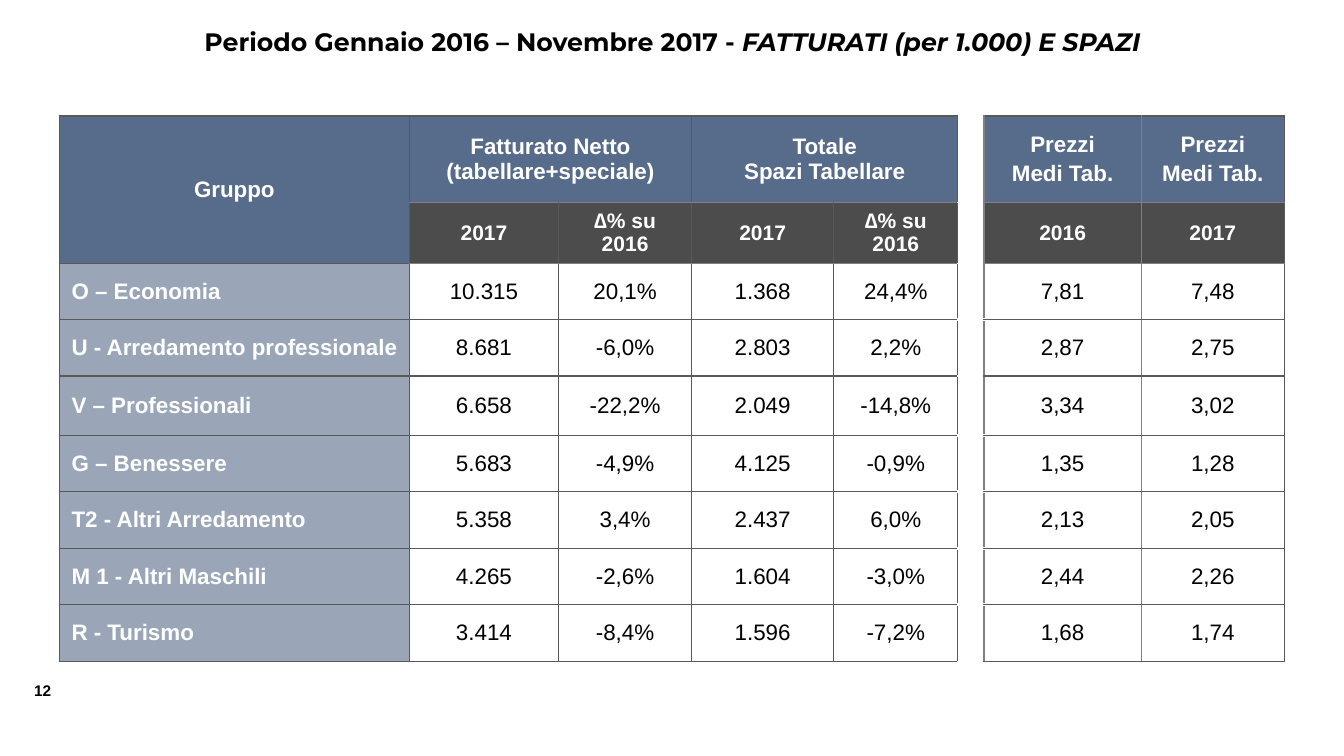
from dataclasses import dataclass
from typing import Optional

from lxml.etree import SubElement
from pptx import Presentation
from pptx.dml.color import RGBColor
from pptx.enum.text import MSO_ANCHOR, PP_ALIGN
from pptx.oxml.ns import qn
from pptx.util import Inches, Pt


@dataclass(frozen=True)
class Theme:
    blue: str = "576B8A"
    black: str = "000000"
    white: str = "FFFFFF"
    dark_rule: str = "595959"
    light_rule: str = "808080"
    table_font: str = "Arial"
    title_font: str = "Montserrat"
    title_size: int = 18
    table_size: int = 16
    subhead_size: int = 15
    number_size: int = 11


@dataclass(frozen=True)
class CellStyle:
    color: str
    fill: Optional[str] = None
    opacity: int = 100
    size: int = 16
    bold: bool = True
    align: PP_ALIGN = PP_ALIGN.CENTER
    margin_x: float = 0.1
    margin_y: float = 0.05
    left_indent: float = 0
    space_between: float = 0


@dataclass(frozen=True)
class Group:
    name: str
    revenue: str
    revenue_change: str
    space: str
    space_change: str
    price_2016: str
    price_2017: str

    def cells(self) -> list[str]:
        return [self.name, self.revenue, self.revenue_change, self.space,
                self.space_change, "", self.price_2016, self.price_2017]


THEME = Theme()
HEAD = CellStyle(THEME.white, THEME.blue, size=THEME.table_size)
PRICE_HEAD = CellStyle(THEME.white, THEME.blue, size=THEME.table_size, space_between=3.2)
SUBHEAD = CellStyle(THEME.white, THEME.black, 70, THEME.subhead_size)
NAME = CellStyle(THEME.white, THEME.blue, 60, THEME.table_size, align=PP_ALIGN.LEFT,
                 margin_x=0, margin_y=0, left_indent=0.12)
VALUE = CellStyle(THEME.black, size=THEME.table_size, bold=False, margin_x=0, margin_y=0)
GAP = CellStyle(THEME.black, THEME.white)

COL_WIDTHS = [3.47, 1.48, 1.32, 1.41, 1.23, 0.26, 1.56, 1.42]
ROW_HEIGHTS = [0.86, 0.6, 0.56, 0.56, 0.59, 0.56, 0.56, 0.56, 0.56]
GAP_COL = 5
PRICE_HEADING = "Prezzi\nMedi Tab."
HEADINGS = ["Gruppo", "Fatturato Netto (tabellare+speciale)", "",
            "Totale\nSpazi Tabellare", "", "", PRICE_HEADING, PRICE_HEADING]
SUBHEADINGS = ["", "2017", "∆% su 2016", "2017", "∆% su 2016", "", "2016", "2017"]
GROUPS = [
    Group("O – Economia", "10.315", "20,1%", "1.368", "24,4%", "7,81", "7,48"),
    Group("U - Arredamento professionale", "8.681", "-6,0%", "2.803", "2,2%", "2,87", "2,75"),
    Group("V – Professionali", "6.658", "-22,2%", "2.049", "-14,8%", "3,34", "3,02"),
    Group("G – Benessere", "5.683", "-4,9%", "4.125", "-0,9%", "1,35", "1,28"),
    Group("T2 - Altri Arredamento", "5.358", "3,4%", "2.437", "6,0%", "2,13", "2,05"),
    Group("M 1 - Altri Maschili", "4.265", "-2,6%", "1.604", "-3,0%", "2,44", "2,26"),
    Group("R - Turismo", "3.414", "-8,4%", "1.596", "-7,2%", "1,68", "1,74"),
]


def set_font(font, name: str, size: int, color: str, bold: bool) -> None:
    font.name, font.size, font.bold = name, Pt(size), bold
    font.color.rgb = RGBColor.from_string(color)


def cell_style(row: int, col: int) -> CellStyle:
    if col == GAP_COL:
        return GAP
    if row == 0:
        return PRICE_HEAD if col > GAP_COL else HEAD
    if row == 1:
        return SUBHEAD if col else HEAD
    return VALUE if col else NAME


def add_border(cell, side: str, color: str, width: float) -> None:
    ln = SubElement(cell._tc.get_or_add_tcPr(), qn(f"a:ln{side}"), w=str(Pt(width)))
    SubElement(SubElement(ln, qn("a:solidFill")), qn("a:srgbClr"), val=color)


def draw_borders(cell, row: int, col: int) -> None:
    """Colour each edge by its grid line, so that neighbouring cells agree."""
    for side, line in (("L", col), ("R", col + 1)):
        light = line in (GAP_COL + 1, GAP_COL + 2)
        add_border(cell, side, THEME.light_rule if light else THEME.dark_rule, 1)
    for side, line in (("T", row), ("B", row + 1)):
        if col == GAP_COL:
            add_border(cell, side, THEME.white, 2.25 if 3 <= line <= 8 else 1)
        else:
            light = line in (1, 2) and col > 0
            add_border(cell, side, THEME.light_rule if light else THEME.dark_rule, 1)


def fill_cell(cell, style: CellStyle) -> None:
    if style.fill is None:
        cell.fill.background()
        return
    cell.fill.solid()
    cell.fill.fore_color.rgb = RGBColor.from_string(style.fill)
    if style.opacity < 100:
        clr = cell._tc.tcPr.find(qn("a:solidFill")).find(qn("a:srgbClr"))
        SubElement(clr, qn("a:alpha"), val=str(style.opacity * 1000))


def write_cell(cell, text: str, style: CellStyle) -> None:
    cell.vertical_anchor = MSO_ANCHOR.MIDDLE
    cell.margin_left = Inches(style.margin_x + style.left_indent)
    cell.margin_right = Inches(style.margin_x)
    cell.margin_top = cell.margin_bottom = Inches(style.margin_y)
    cell.text_frame.text = text
    for i, p in enumerate(cell.text_frame.paragraphs):
        p.alignment = style.align
        if i and style.space_between:
            p.space_before = Pt(style.space_between)
        set_font(p.font, THEME.table_font, style.size, style.color, style.bold)


def add_figures_table(slide) -> None:
    rows = [HEADINGS, SUBHEADINGS] + [group.cells() for group in GROUPS]
    frame = slide.shapes.add_table(
        len(rows), len(COL_WIDTHS), Inches(0.59), Inches(1.15),
        Inches(sum(COL_WIDTHS)), Inches(sum(ROW_HEIGHTS)))
    table = frame.table
    table.first_row = table.horz_banding = False
    for column, width in zip(table.columns, COL_WIDTHS):
        column.width = Inches(width)
    for table_row, height in zip(table.rows, ROW_HEIGHTS):
        table_row.height = Inches(height)
    for row, texts in enumerate(rows):
        for col, text in enumerate(texts):
            cell, style = table.cell(row, col), cell_style(row, col)
            draw_borders(cell, row, col)
            fill_cell(cell, style)
            write_cell(cell, text, style)
    for start, end in (((0, 0), (1, 0)), ((0, 1), (0, 2)), ((0, 3), (0, 4))):
        table.cell(*start).merge(table.cell(*end))


def add_title(slide) -> None:
    box = slide.shapes.add_textbox(Inches(1.58), Inches(0.21), Inches(10.18), Inches(0.4))
    tf = box.text_frame
    tf.word_wrap = True
    p = tf.paragraphs[0]
    p.alignment = PP_ALIGN.CENTER
    set_font(p.font, THEME.title_font, THEME.title_size, THEME.black, True)
    p.add_run().text = "Periodo Gennaio 2016 – Novembre 2017 - "
    r = p.add_run()
    r.text = "FATTURATI (per 1.000) E SPAZI"
    r.font.italic = True


def add_slide_number(slide) -> None:
    box = slide.shapes.add_textbox(Inches(0.24), Inches(6.71), Inches(0.42), Inches(0.29))
    tf = box.text_frame
    tf.word_wrap = False
    tf.text = "12"
    set_font(tf.paragraphs[0].font, THEME.table_font, THEME.number_size, THEME.black, True)


def main() -> None:
    prs = Presentation()
    prs.slide_width, prs.slide_height = Inches(13.33), Inches(7.5)
    slide = prs.slides.add_slide(prs.slide_layouts[6])
    add_slide_number(slide)
    add_title(slide)
    add_figures_table(slide)
    prs.save("out.pptx")


if __name__ == "__main__":
    main()
